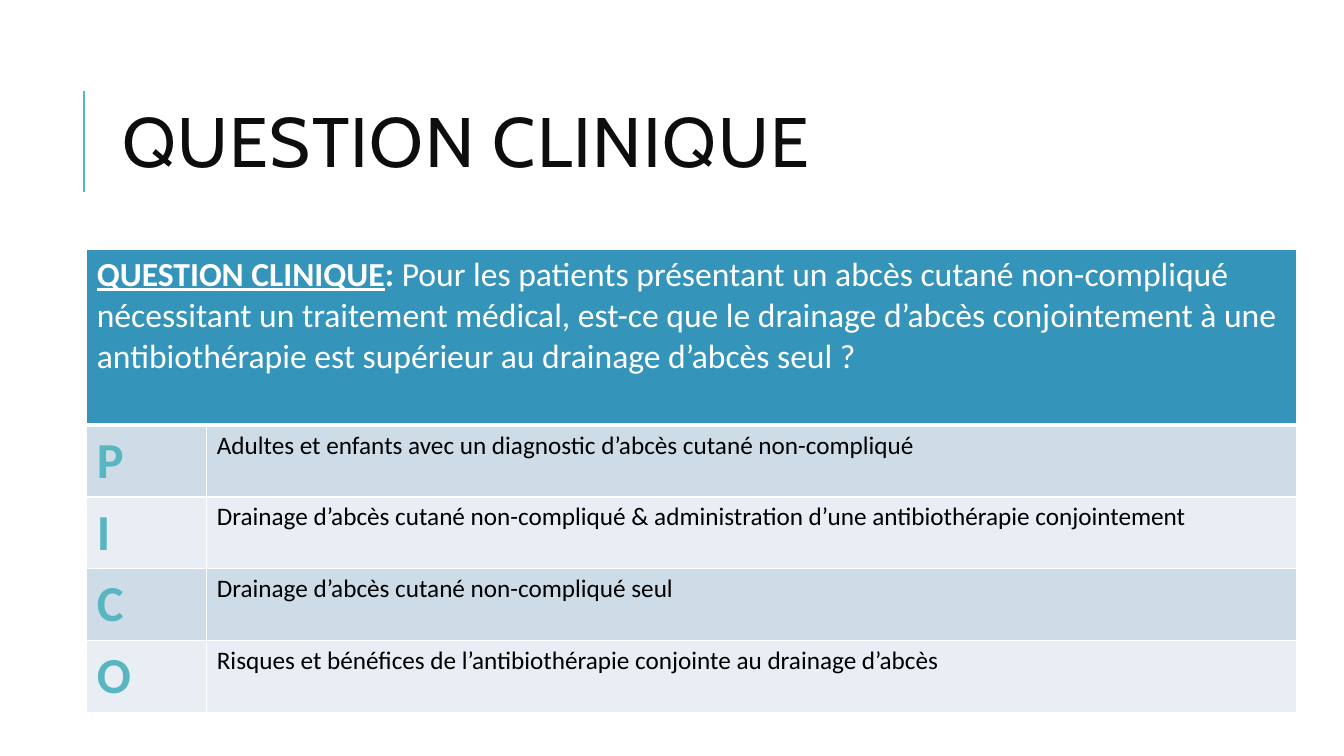
from dataclasses import dataclass

from lxml.etree import SubElement
from pptx import Presentation
from pptx.dml.color import RGBColor
from pptx.enum.text import MSO_ANCHOR
from pptx.oxml import parse_xml
from pptx.oxml.ns import nsdecls, qn
from pptx.util import Pt


@dataclass(frozen=True)
class Theme:
    title_font: str = "Cabin"
    body_font: str = "Calibri"
    title_size: int = 50
    question_size: int = 24
    letter_size: int = 36
    body_size: int = 18
    title: str = "0D0D0D"
    accent: str = "58B6C0"
    header: str = "3494BA"
    bands: tuple = ("CEDCE7", "E8EEF3")
    white: str = "FFFFFF"
    black: str = "000000"


THEME = Theme()
HEADER_HEIGHT = 125.6
ROW_HEIGHT = 51.4

QUESTION_LABEL = "QUESTION CLINIQUE"
QUESTION = (
    "Pour les patients présentant un abcès cutané non-compliqué nécessitant "
    "un traitement médical, est-ce que le drainage d’abcès conjointement à une "
    "antibiothérapie est supérieur au drainage d’abcès seul ?"
)
PICO = [
    ("P", "Adultes et enfants avec un diagnostic d’abcès cutané non-compliqué"),
    ("I", "Drainage d’abcès cutané non-compliqué & administration d’une "
          "antibiothérapie conjointement"),
    ("C", "Drainage d’abcès cutané non-compliqué seul"),
    ("O", "Risques et bénéfices de l’antibiothérapie conjointe au drainage d’abcès"),
]


def set_font(font, name, size, color, bold=False):
    font.name = name
    font.size = Pt(size)
    font.bold = bold
    font.color.rgb = RGBColor.from_string(color)


def add_accent_line(s, x, top, bottom):
    line = s.shapes.add_connector(1, Pt(x), Pt(top), Pt(x), Pt(bottom))
    line.line.color.rgb = RGBColor.from_string(THEME.accent)
    line.line.width = Pt(1.5)
    SubElement(line._element.spPr, qn("a:effectLst"))


def add_title(s, text, left, top, width, height):
    tf = s.shapes.add_textbox(Pt(left), Pt(top), Pt(width), Pt(height)).text_frame
    tf.word_wrap = True
    tf.vertical_anchor = MSO_ANCHOR.MIDDLE
    p = tf.paragraphs[0]
    p.line_spacing = 0.8
    r = p.add_run()
    r.text = text
    set_font(r.font, THEME.title_font, THEME.title_size, THEME.title)
    r.font._element.set("spc", "100")


def style_cell(cell, fill, top=1, bottom=1):
    """Fill the cell and give it white borders, with widths in points."""
    cell.fill.solid()
    cell.fill.fore_color.rgb = RGBColor.from_string(fill)
    widths = {"lnL": 1, "lnR": 1, "lnT": top, "lnB": bottom}
    for i, (side, width) in enumerate(widths.items()):
        cell._tc.tcPr.insert(i, parse_xml(
            f'<a:{side} {nsdecls("a")} w="{Pt(width)}"><a:solidFill>'
            f'<a:srgbClr val="{THEME.white}"/></a:solidFill></a:{side}>'))


def fill_question(cell):
    p = cell.text_frame.paragraphs[0]
    set_font(p.font, THEME.body_font, THEME.question_size, THEME.white)
    parts = [(QUESTION_LABEL, True, True), (": ", True, False), (QUESTION, False, False)]
    for text, bold, underline in parts:
        r = p.add_run()
        r.text = text
        set_font(r.font, THEME.body_font, THEME.question_size, THEME.white, bold)
        r.font.underline = underline


def fill_cell(cell, text, size, color, bold=False):
    p = cell.text_frame.paragraphs[0]
    r = p.add_run()
    r.text = text
    set_font(r.font, THEME.body_font, size, color, bold)


def add_pico_table(s, left, top, column_widths):
    height = HEADER_HEIGHT + ROW_HEIGHT * len(PICO)
    table = s.shapes.add_table(len(PICO) + 1, len(column_widths), Pt(left), Pt(top),
                               Pt(sum(column_widths)), Pt(height)).table
    for column, width in zip(table.columns, column_widths):
        column.width = Pt(width)
    for i, row in enumerate(table.rows):
        row.height = Pt(ROW_HEIGHT if i else HEADER_HEIGHT)

    for cell in table.rows[0].cells:
        style_cell(cell, THEME.header, bottom=3)
    table.cell(0, 0).merge(table.cell(0, 1))
    fill_question(table.cell(0, 0))

    for i, (letter, text) in enumerate(PICO):
        letter_cell, text_cell = table.rows[i + 1].cells
        for cell in (letter_cell, text_cell):
            style_cell(cell, THEME.bands[i % 2], top=1 if i else 3)
        fill_cell(letter_cell, letter, THEME.letter_size, THEME.accent, bold=True)
        fill_cell(text_cell, text, THEME.body_size, THEME.black)


def main():
    prs = Presentation()
    prs.slide_width, prs.slide_height = Pt(960), Pt(540)
    s = prs.slides.add_slide(prs.slide_layouts[6])
    add_accent_line(s, 60, 65, 137)
    add_title(s, "QUESTION CLINIQUE", 80.6, 46, 765.4, 118)
    add_pico_table(s, 62, 178, [85.7, 778.3])
    prs.save("out.pptx")


if __name__ == "__main__":
    main()
